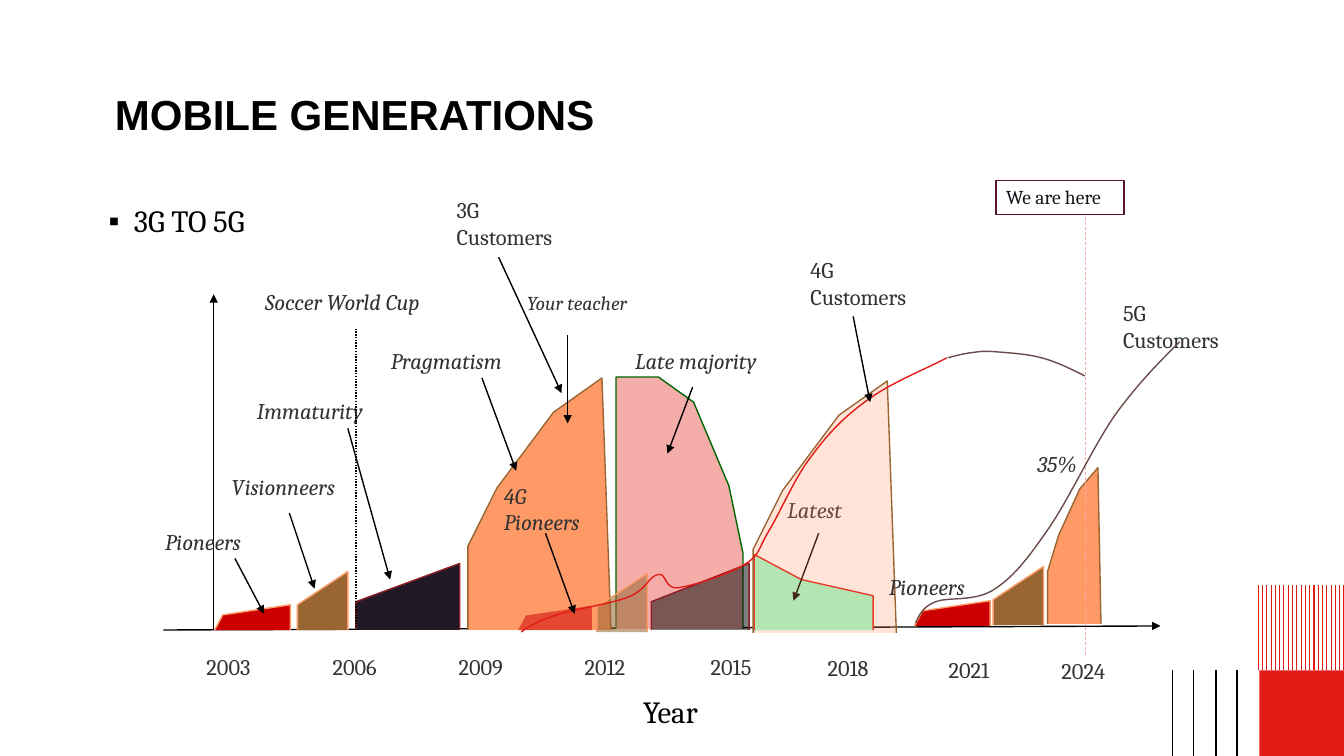
from lxml.etree import SubElement
from pptx import Presentation
from pptx.dml.color import RGBColor
from pptx.enum.dml import MSO_LINE
from pptx.enum.shapes import MSO_CONNECTOR, MSO_SHAPE
from pptx.enum.text import MSO_ANCHOR, PP_ALIGN
from pptx.oxml.ns import qn
from pptx.util import Pt

PX = 9144  # 100 px to the inch

BLACK = RGBColor(0x00, 0x00, 0x00)
WHITE = RGBColor(0xFF, 0xFF, 0xFF)
GREY = RGBColor(0x33, 0x33, 0x33)
INK = RGBColor(0x19, 0x13, 0x1D)
PLUM = RGBColor(0x59, 0x14, 0x2A)
RED = RGBColor(0xE3, 0x1B, 0x17)
CRIMSON = RGBColor(0xCC, 0x00, 0x00)
MAROON = RGBColor(0x8D, 0x1D, 0x24)
ORANGE = RGBColor(0xFF, 0x99, 0x66)
BROWN = RGBColor(0x99, 0x66, 0x33)
NIGHT = RGBColor(0x22, 0x19, 0x27)
PINK = RGBColor(0xF5, 0xAD, 0xAA)
GREEN = RGBColor(0x00, 0x66, 0x00)
MINT = RGBColor(0x99, 0xFF, 0xCC)
UMBER = RGBColor(0x6B, 0x4C, 0x4B)

# Adoption phases, measured from the bottom left corner
PIONEERS = [(0, 0), (8, -15), (75, -25), (75, 0)]
VISIONEERS = [(0, 0), (0, -25), (50, -58), (50, 0)]
IMMATURITY = [(0, 0), (0, -28), (103, -66), (103, 0)]
IMMATURITY_4G = [(0, 0), (0, -28), (97, -66), (97, 0)]
PRAGMATISM = [(0, 0), (0, -83), (29, -141), (85, -216), (133, -250), (142, 0)]
PRAGMATISM_5G = [(0, 0), (0, -52), (11, -88), (32, -134), (50, -155), (53, 0)]
LATE_MAJORITY = [(0, 0), (0, -250), (42, -250), (77, -225), (112, -142),
                 (126, -75), (126, 0)]
LATEST = [(0, 0), (0, -75), (47, -50), (118, -34), (118, 0)]

# Customer curves: a start, then two controls and an end for each piece
CURVE_4G = [(517, 627), (525, 621), (534, 616), (552, 610), (570, 604),
            (607, 599), (624, 592), (641, 585), (644, 571), (653, 570),
            (661, 568), (659, 585), (673, 583), (688, 581), (725, 569),
            (740, 559), (754, 550), (752, 544), (763, 526), (774, 508),
            (789, 472), (806, 451), (822, 429), (840, 411), (863, 395),
            (885, 379), (927, 362), (939, 355)]
CURVE_4G_DECLINE = [(940, 355), (948, 353), (955, 351), (963, 350), (971, 349),
                    (975, 348), (987, 349), (999, 350), (1018, 351),
                    (1033, 355), (1048, 359), (1062, 366), (1076, 373)]
CURVE_5G = [(908, 618), (912, 610), (915, 602), (928, 597), (940, 592),
            (965, 597), (984, 586), (1002, 575), (1016, 559), (1036, 530),
            (1057, 502), (1083, 445), (1105, 413), (1128, 381), (1149, 360),
            (1170, 339)]

YEARS = [("2003", 195, 643), ("2006", 320, 643), ("2009", 445, 643),
         ("2012", 570, 643), ("2015", 695, 643), ("2018", 811, 644),
         ("2021", 931, 646), ("2024", 1043, 647)]


def add_run(paragraph, text, size, color, font="Cambria", italic=False, bold=False):
    run = paragraph.add_run()
    run.text = text
    run.font.name = font
    run.font.size = Pt(size)
    run.font.italic = italic
    run.font.bold = bold
    run.font.color.rgb = color


def label(slide, text, box, size=16, color=GREY, italic=False, fill=None, outline=None):
    frame = slide.shapes.add_textbox(*(v * PX for v in box))
    frame.text_frame.word_wrap = True
    if fill is not None:
        frame.fill.solid()
        frame.fill.fore_color.rgb = fill
    if outline is not None:
        frame.line.color.rgb = outline
        frame.line.width = Pt(1)
    paragraph = frame.text_frame.paragraphs[0]
    add_run(paragraph, text, size, color, italic=italic)
    return paragraph


def rule(slide, start, end, color=BLACK, width=1, dash=None, arrow=False):
    line = slide.shapes.add_connector(
        MSO_CONNECTOR.STRAIGHT, *(v * PX for v in start + end))
    line.line.color.rgb = color
    line.line.width = Pt(width)
    if dash is not None:
        line.line.dash_style = dash
    if arrow:
        SubElement(line.line._get_or_add_ln(), qn("a:tailEnd"), type="triangle")
    SubElement(line._element.spPr, qn("a:effectLst"))


def callout(slide, text, box, tail, tip, size=16, italic=True, fill=None):
    """Label with an arrow from tail to tip."""
    rule(slide, tail, tip, arrow=True)
    label(slide, text, box, size, italic=italic, fill=fill)


def outline_shape(slide, strokes, color, width=1):
    """Unfilled freeform made of one or more open strokes."""
    strokes = [[(round(x * PX), round(y * PX)) for x, y in s] for s in strokes]
    builder = slide.shapes.build_freeform(*strokes[0][0])
    for i, (start, *rest) in enumerate(strokes):
        if i:
            builder.move_to(*start)
        builder.add_line_segments(rest, close=False)
    shape = builder.convert_to_shape()
    shape.shadow.inherit = False
    shape.fill.background()
    shape.line.color.rgb = color
    shape.line.width = Pt(width)
    return shape


def phase(slide, left, bottom, outline, fill, color, opacity=100):
    """Filled area standing on the time axis."""
    area = outline_shape(slide, [[(left + x, bottom + y) for x, y in outline]], color)
    area.fill.solid()
    area.fill.fore_color.rgb = fill
    if opacity < 100:
        tint = area._element.spPr.find(qn("a:solidFill"))[0]
        SubElement(tint, qn("a:alpha"), val=str(opacity * 1000))


def curve(slide, controls, color, steps=12):
    """Smooth line through cubic Bezier pieces."""
    points = [controls[0]]
    for i in range(0, len(controls) - 1, 3):
        piece = controls[i:i + 4]
        for step in range(1, steps + 1):
            t = step / steps
            weights = ((1 - t) ** 3, 3 * t * (1 - t) ** 2, 3 * t * t * (1 - t), t ** 3)
            points.append(tuple(sum(w * p[axis] for w, p in zip(weights, piece))
                                for axis in (0, 1)))
    outline_shape(slide, [points], color)


def corner_decoration(slide):
    stripes = [1333 - i * 4.25 for i in range(21)]
    outline_shape(slide, [[(x, 665), (x, 580)] for x in stripes], RED, 0.75)
    block = slide.shapes.add_shape(
        MSO_SHAPE.RECTANGLE, 1249 * PX, 665 * PX, 84 * PX, 85 * PX)
    block.shadow.inherit = False
    block.fill.solid()
    block.fill.fore_color.rgb = RED
    block.line.fill.background()
    for x in (1163, 1184, 1206, 1227):
        rule(slide, (x, 665), (x, 750))


def heading(slide):
    title = slide.shapes.title
    title.left, title.top, title.width, title.height = (
        v * PX for v in (114, 93, 1138, 145))
    frame = title.text_frame
    frame.margin_left = frame.margin_right = frame.margin_top = frame.margin_bottom = 0
    frame.vertical_anchor = MSO_ANCHOR.TOP
    frame.word_wrap = True
    paragraph = frame.paragraphs[0]
    paragraph.line_spacing = 0.9
    paragraph.alignment = PP_ALIGN.LEFT
    add_run(paragraph, "MOBILE GENERATIONS", 30, BLACK, "Arial", bold=True)

    topic = label(slide, "3G TO 5G", (98, 199, 300, 45), 22, BLACK)
    topic.line_spacing = 0.9
    properties = topic._p.get_or_add_pPr()
    properties.set("marL", str(25 * PX))
    properties.set("indent", str(-25 * PX))
    SubElement(properties, qn("a:buFont"), typeface="Arial")
    SubElement(properties, qn("a:buChar"), char="▪")


def main():
    prs = Presentation()
    prs.slide_width, prs.slide_height = 1333 * PX, 750 * PX
    slide = prs.slides.add_slide(prs.slide_layouts[5])
    corner_decoration(slide)
    heading(slide)

    phase(slide, 1039, 619, PRAGMATISM_5G, ORANGE, BROWN)
    rule(slide, (162, 625), (1151, 621), arrow=True)
    rule(slide, (212, 625), (212, 292), arrow=True)
    for year, left, top in YEARS:
        label(slide, year, (left, top, 73, 37))
    label(slide, "Year", (628, 682, 82, 47), 22, BLACK)

    phase(slide, 213, 625, PIONEERS, CRIMSON, ORANGE)
    callout(slide, "Pioneers", (154, 519, 109, 37), (233, 554), (262, 609))
    phase(slide, 295, 625, VISIONEERS, BROWN, ORANGE)
    callout(slide, "Visionneers", (220, 464, 137, 37), (287, 509), (312, 584))
    phase(slide, 353, 625, IMMATURITY, NIGHT, MAROON)
    callout(slide, "Immaturity", (245, 389, 139, 37), (345, 425), (387, 575))
    rule(slide, (353, 625), (353, 325), dash=MSO_LINE.ROUND_DOT)
    label(slide, "Soccer World Cup", (253, 281, 202, 37), italic=True)
    phase(slide, 464, 625, PRAGMATISM, ORANGE, BROWN)
    callout(slide, "Pragmatism", (378, 339, 146, 37), (478, 375), (512, 467))
    phase(slide, 611, 624, LATE_MAJORITY, PINK, GREEN)
    callout(slide, "Late majority", (620, 339, 159, 37), (687, 384), (662, 450))
    phase(slide, 748, 625, LATEST, MINT, RED)
    callout(slide, "Latest", (771, 487, 81, 37), (812, 529), (787, 596))
    callout(slide, "Your teacher", (513, 284, 134, 34), (563, 332), (563, 420), size=14)

    phase(slide, 513, 625, PIONEERS, CRIMSON, ORANGE, 53)
    phase(slide, 592, 627, VISIONEERS, BROWN, ORANGE, 56)
    phase(slide, 646, 625, IMMATURITY_4G, BLACK, MAROON, 50)
    phase(slide, 747, 628, PRAGMATISM, ORANGE, BROWN, 26)
    curve(slide, CURVE_4G, RED)
    callout(slide, "4G Customers", (794, 249, 137, 65), (846, 313), (863, 399),
            italic=False, fill=WHITE)
    callout(slide, "4G Pioneers", (490, 473, 121, 65), (541, 529), (570, 609))

    rule(slide, (1076, 650), (1076, 201), PINK, 0.5, MSO_LINE.DASH)
    label(slide, "We are here", (988, 179, 127, 34), 14, INK, fill=WHITE, outline=PLUM)
    callout(slide, "3G Customers", (443, 190, 137, 65), (494, 254), (557, 390),
            italic=False, fill=WHITE)
    label(slide, "5G Customers", (1104, 292, 137, 65), fill=WHITE)
    label(slide, "35%", (1019, 442, 71, 36), italic=True)
    curve(slide, CURVE_4G_DECLINE, UMBER)
    phase(slide, 907, 621, PIONEERS, CRIMSON, ORANGE)
    phase(slide, 985, 620, VISIONEERS, BROWN, ORANGE)
    label(slide, "Pioneers", (872, 564, 109, 37), italic=True)
    curve(slide, CURVE_5G, UMBER)
    prs.save("out.pptx")


if __name__ == "__main__":
    main()
